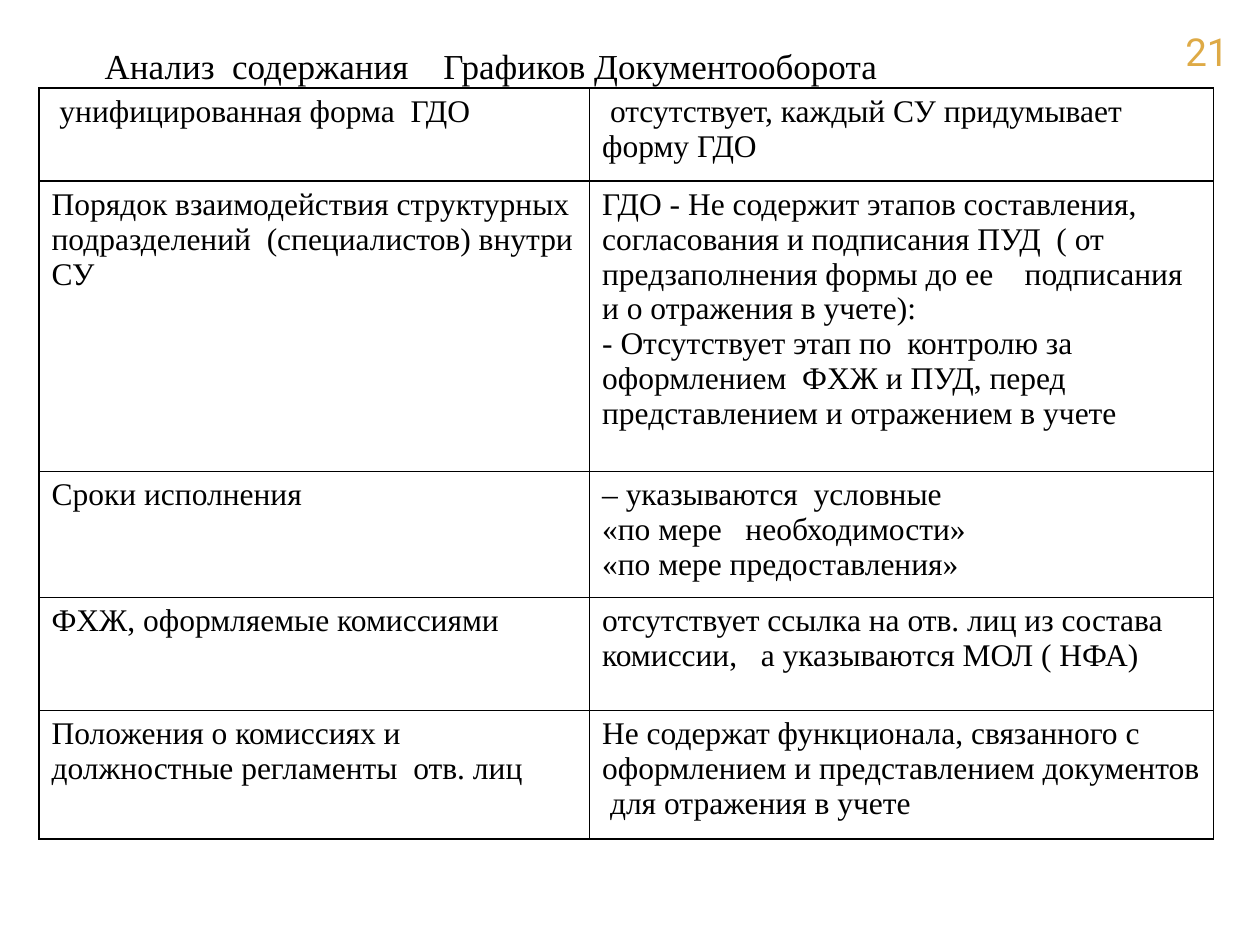
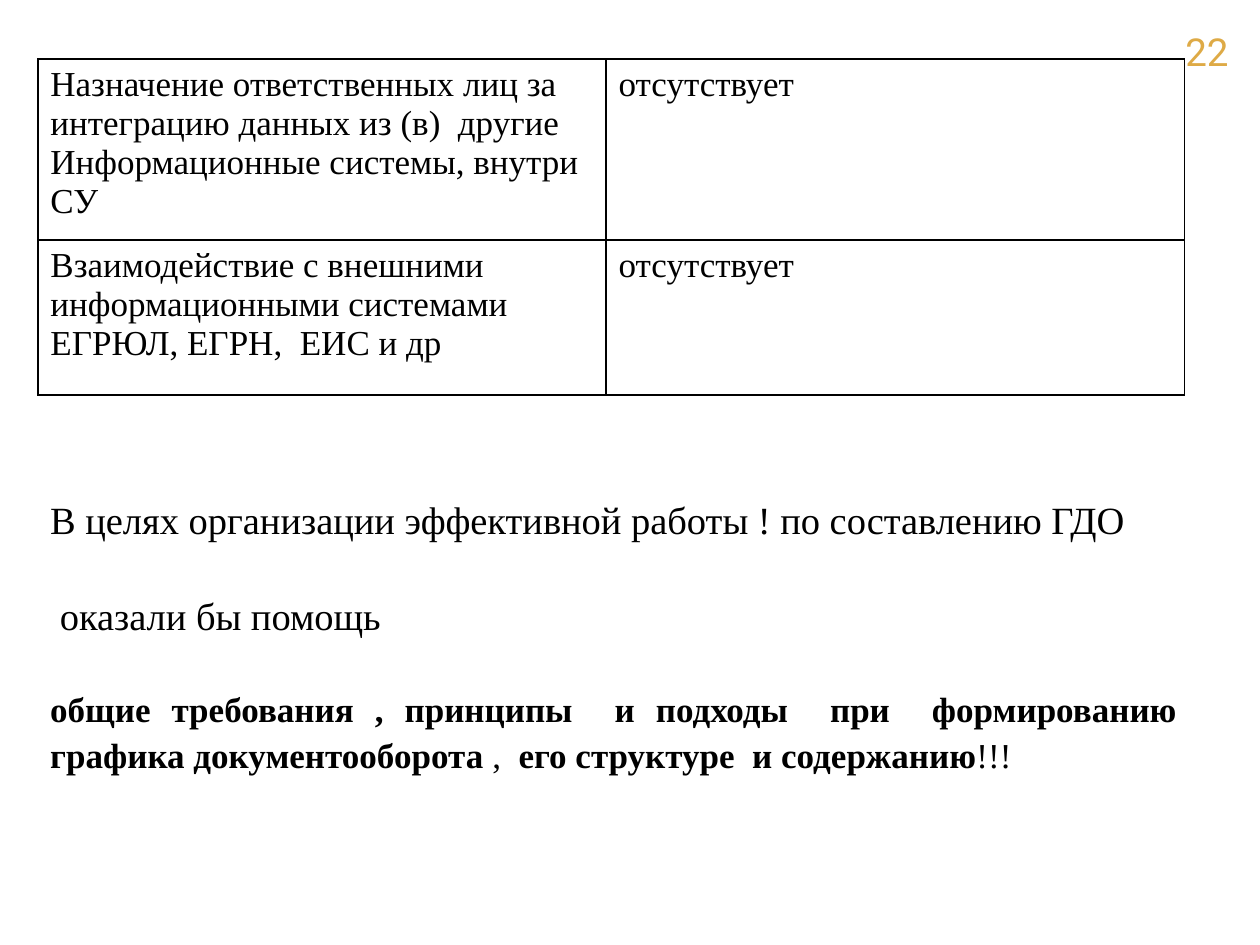
from lxml.etree import SubElement
from pptx import Presentation
from pptx.dml.color import RGBColor
from pptx.enum.text import MSO_ANCHOR, MSO_AUTO_SIZE, PP_ALIGN
from pptx.oxml.ns import qn
from pptx.util import Pt

COLORS = {"text": "000000", "border": "000000", "page_number": "DEAA46"}
BODY_FONT = "Times New Roman"
NUMBER_FONT = "Roboto"
TITLE_ONLY, BLANK = 5, 6

TITLE = "Анализ  содержания    Графиков Документооборота"

ANALYSIS = {
    "place": (22.3, 50.4),
    "columns": (314.6, 356.4),
    "size": 18,
    "rows": [
        (53, " унифицированная форма  ГДО",
         " отсутствует, каждый СУ придумывает  форму ГДО"),
        (166, "Порядок взаимодействия структурных подразделений  (специалистов) внутри СУ",
         "ГДО - Не содержит этапов составления, согласования и подписания ПУД  "
         "( от предзаполнения формы до ее    подписания  и о отражения в учете):\n"
         "- Отсутствует этап по  контролю за оформлением  ФХЖ и ПУД, перед  "
         "представлением и отражением в учете"),
        (72, "Сроки исполнения",
         "– указываются  условные\n«по мере   необходимости»\n«по мере предоставления»"),
        (64.5, "ФХЖ, оформляемые комиссиями",
         "отсутствует ссылка на отв. лиц из состава комиссии,   а указываются МОЛ ( НФА)"),
        (73.5, "Положения о комиссиях и должностные регламенты  отв. лиц",
         "Не содержат функционала, связанного с оформлением и представлением "
         "документов  для отражения в учете"),
    ],
}

INTEGRATION = {
    "place": (21.6, 33.8),
    "columns": (324.7, 330.5),
    "size": 20,
    "rows": [
        (103, "Назначение ответственных лиц за интеграцию данных из (в)  другие\n"
              "Информационные системы, внутри СУ", "отсутствует"),
        (88.6, "Взаимодействие с внешними информационными системами\n"
               "ЕГРЮЛ, ЕГРН,  ЕИС и др", "отсутствует"),
    ],
}

CONCLUSION = [
    (22, [("В целях организации эффективной работы ! по составлению ГДО", False)]),
    (22, [(" оказали бы помощь", False)]),
    (20, [("общие требования , принципы  и подходы  при  формированию  "
           "графика документооборота ", True),
          (",  ", False),
          ("его структуре  и содержанию", True),
          ("!!!", False)]),
]
CONCLUSION_GAP = 26.3


def format_run(run, size, font=BODY_FONT, color="text", bold=False):
    run.font.name = font
    run.font.size = Pt(size)
    run.font.bold = bold
    run.font.color.rgb = RGBColor.from_string(COLORS[color])


def format_text(text_frame, size, **style):
    for paragraph in text_frame.paragraphs:
        for run in paragraph.runs:
            format_run(run, size, **style)


def add_text_box(slide, left, top, width, height):
    text_frame = slide.shapes.add_textbox(
        Pt(left), Pt(top), Pt(width), Pt(height)).text_frame
    text_frame.word_wrap = True
    return text_frame


def add_page_number(slide, number):
    text_frame = add_text_box(slide, 670.3, 8, 67, 42.5)
    text_frame.vertical_anchor = MSO_ANCHOR.MIDDLE
    text_frame.text = str(number)
    format_text(text_frame, 22, font=NUMBER_FONT, color="page_number")


def add_title(slide, text):
    title = slide.shapes.title
    title.left, title.top, title.width, title.height = (
        Pt(52.6), Pt(21.6), Pt(536.4), Pt(31.7))
    text_frame = title.text_frame
    text_frame.text = text
    text_frame.vertical_anchor = MSO_ANCHOR.TOP
    text_frame.auto_size = MSO_AUTO_SIZE.NONE
    text_frame.paragraphs[0].alignment = PP_ALIGN.LEFT
    format_text(text_frame, 20)


def add_borders(cell):
    properties = cell._tc.get_or_add_tcPr()
    for side in ("a:lnL", "a:lnR", "a:lnT", "a:lnB"):
        line = SubElement(properties, qn(side), w=str(Pt(1)))
        fill = SubElement(line, qn("a:solidFill"))
        SubElement(fill, qn("a:srgbClr"), val=COLORS["border"])


def add_grid(slide, content):
    rows, columns = content["rows"], content["columns"]
    left, top = content["place"]
    height = sum(row[0] for row in rows)
    table = slide.shapes.add_table(
        len(rows), len(columns), Pt(left), Pt(top), Pt(sum(columns)), Pt(height)).table
    table.first_row = table.horz_banding = False
    for column, width in zip(table.columns, columns):
        column.width = Pt(width)
    for table_row, (row_height, *texts) in zip(table.rows, rows):
        table_row.height = Pt(row_height)
        for cell, text in zip(table_row.cells, texts):
            cell.text = text
            format_text(cell.text_frame, content["size"])
            add_borders(cell)
            cell.fill.background()


def add_conclusion(slide):
    text_frame = add_text_box(slide, 21.6, 277.9, 670.3, 206)
    for index, (size, parts) in enumerate(CONCLUSION):
        paragraph = text_frame.add_paragraph() if index else text_frame.paragraphs[0]
        paragraph.alignment = PP_ALIGN.JUSTIFY
        paragraph.line_spacing = 1.08
        paragraph.space_before = Pt(CONCLUSION_GAP if index else 0)
        for text, bold in parts:
            run = paragraph.add_run()
            run.text = text
            format_run(run, size, bold=bold)


def add_slide(presentation, layout, number):
    slide = presentation.slides.add_slide(presentation.slide_layouts[layout])
    add_page_number(slide, number)
    return slide


def main():
    presentation = Presentation()
    presentation.slide_width, presentation.slide_height = Pt(720), Pt(540)

    analysis = add_slide(presentation, TITLE_ONLY, 21)
    add_title(analysis, TITLE)
    add_grid(analysis, ANALYSIS)

    integration = add_slide(presentation, BLANK, 22)
    add_grid(integration, INTEGRATION)
    add_conclusion(integration)

    presentation.save("out.pptx")


if __name__ == "__main__":
    main()
